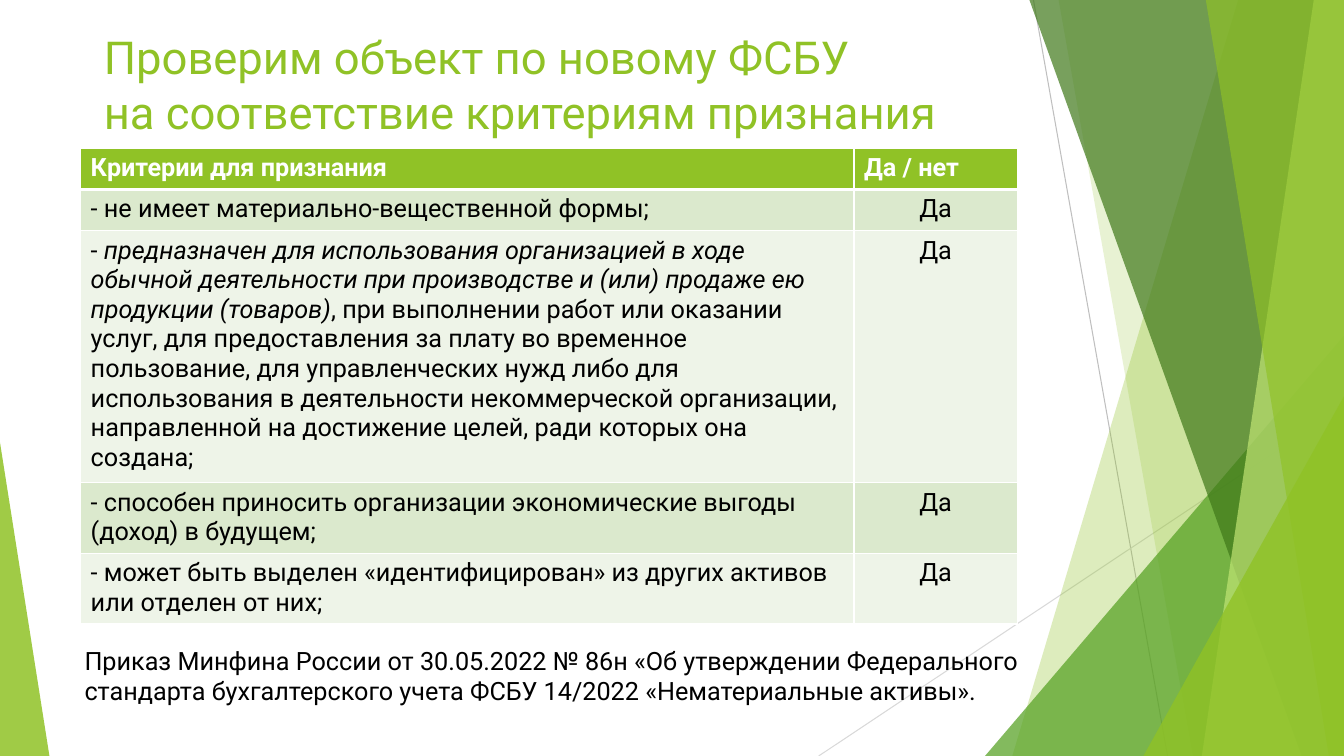
from lxml import etree
from pptx import Presentation
from pptx.dml.color import RGBColor
from pptx.enum.shapes import MSO_CONNECTOR, MSO_SHAPE
from pptx.enum.text import MSO_ANCHOR, PP_ALIGN
from pptx.oxml import parse_xml
from pptx.oxml.ns import nsdecls, qn
from pptx.util import Pt

PX = 9144
FONT = "Roboto"
LIME = RGBColor(0x90, 0xC2, 0x26)
GREEN = RGBColor(0x54, 0xA0, 0x21)
FOREST = RGBColor(0x3F, 0x78, 0x19)
PALE_LIME = RGBColor(0xC0, 0xE4, 0x74)
ROW_TINTS = (RGBColor(0xDB, 0xE9, 0xCD), RGBColor(0xEE, 0xF4, 0xE8))
GREY = RGBColor(0xBF, 0xBF, 0xBF)
LIGHT_GREY = RGBColor(0xD9, 0xD9, 0xD9)
WHITE = RGBColor(0xFF, 0xFF, 0xFF)
BLACK = RGBColor(0, 0, 0)

TITLE = "Проверим объект по новому ФСБУ\vна соответствие критериям признания"
SOURCE = ("Приказ Минфина России от 30.05.2022 № 86н «Об утверждении Федерального "
          "стандарта бухгалтерского учета ФСБУ 14/2022 «Нематериальные активы».")
HEADINGS = ("Критерии для признания", "Да / нет")
CRITERIA = (
    (("- не имеет материально-вещественной формы;", False),),
    (("- ", False),
     ("предназначен для использования организацией в ходе обычной деятельности "
      "при производстве и (или) продаже ею продукции (товаров)", True),
     (", при выполнении работ или оказании услуг, для предоставления за плату во "
      "временное пользование, для управленческих нужд либо для использования в "
      "деятельности некоммерческой организации, направленной на достижение целей, "
      "ради которых она создана;", False)),
    (("- способен приносить организации экономические выгоды (доход) в будущем;", False),),
    (("- может быть выделен «идентифицирован» из других активов или отделен от них;", False),),
)
ANSWER = "Да"
COLUMN_WIDTHS = (767, 162)
ROW_HEIGHTS = (41, 41, 250, 70, 69)

RAYS = ((1025, 0, 1158, 750, GREY), (1333, 403, 812, 750, LIGHT_GREY))
BACK_FACETS = ((1228, 1004, LIME, 30), (1050, 1183, LIME, 20))
FRONT_FACETS = ((1021, 1291, FOREST, 70), (1303, 1192, PALE_LIME, 70), (1196, 1318, LIME, 65))
BACK_WEDGE = (977, 333, 356, 417, 1, GREEN, 72)
FRONT_WEDGES = ((1134, 393, 199, 357, 1, LIME, 80), (0, 439, 49, 311, 0, LIME, 85))


def emu(*lengths):
    """Turn px lengths into EMU."""
    return [length * PX for length in lengths]


def write(frame, text, size=18, color=BLACK, bold=False, italic=False, align=PP_ALIGN.LEFT):
    """Add formatted text to the first paragraph of a frame."""
    paragraph = frame.paragraphs[0]
    paragraph.alignment = align
    for index, part in enumerate(text.split("\v")):
        if index:
            paragraph.add_line_break()
        run = paragraph.add_run()
        run.text = part
        font = run.font
        font.name, font.size, font.bold, font.italic = FONT, Pt(size), bold, italic
        font.color.rgb = color


def tint(shape, color, opacity):
    """Fill a shape with a translucent colour and no outline."""
    shape.shadow.inherit = False
    shape.line.fill.background()
    shape.fill.solid()
    shape.fill.fore_color.rgb = color
    swatch = shape.element.spPr.find(qn("a:solidFill"))[0]
    etree.SubElement(swatch, qn("a:alpha")).set("val", str(opacity * 1000))


def add_ray(shapes, x1, y1, x2, y2, color):
    """Draw a thin line across the background."""
    ray = shapes.add_connector(MSO_CONNECTOR.STRAIGHT, *emu(x1, y1, x2, y2))
    ray.line.color.rgb = color
    ray.line.width = Pt(0.75)
    etree.SubElement(ray.element.spPr, qn("a:effectLst"))


def add_facet(shapes, top_x, bottom_x, color, opacity):
    """Draw a slanted full-height panel that reaches the right edge."""
    outline = shapes.build_freeform(top_x, 0, PX)
    outline.add_line_segments(((1333, 0), (1333, 750), (bottom_x, 750)), close=True)
    tint(outline.convert_to_shape(), color, opacity)


def add_wedge(shapes, left, top, width, height, apex, color, opacity):
    """Draw a corner triangle with its apex at the given fraction."""
    wedge = shapes.add_shape(MSO_SHAPE.ISOSCELES_TRIANGLE, *emu(left, top, width, height))
    wedge.adjustments[0] = apex
    tint(wedge, color, opacity)


def style_cell(cell, color, bottom=1):
    """Give a cell white borders and a solid fill."""
    properties = cell._tc.get_or_add_tcPr()
    for side, width in (("L", 1), ("R", 1), ("T", 1), ("B", bottom)):
        properties.append(parse_xml(
            f'<a:ln{side} {nsdecls("a")} w="{Pt(width)}"><a:solidFill>'
            f'<a:srgbClr val="{WHITE}"/></a:solidFill></a:ln{side}>'))
    cell.fill.solid()
    cell.fill.fore_color.rgb = color


def add_criteria_table(shapes):
    """Add the table of recognition criteria."""
    place = emu(80, 147, sum(COLUMN_WIDTHS), sum(ROW_HEIGHTS))
    table = shapes.add_table(len(ROW_HEIGHTS), len(COLUMN_WIDTHS), *place).table
    for column, width in zip(table.columns, COLUMN_WIDTHS):
        column.width = width * PX
    for row, height in zip(table.rows, ROW_HEIGHTS):
        row.height = height * PX
    for index, heading in enumerate(HEADINGS):
        cell = table.cell(0, index)
        style_cell(cell, LIME, bottom=3)
        write(cell.text_frame, heading, color=WHITE, bold=True)
    for index, criterion in enumerate(CRITERIA):
        wording, answer = table.cell(index + 1, 0), table.cell(index + 1, 1)
        for cell in (wording, answer):
            style_cell(cell, ROW_TINTS[index % 2])
        for text, italic in criterion:
            write(wording.text_frame, text, italic=italic)
        write(answer.text_frame, ANSWER, align=PP_ALIGN.CENTER)


def add_backdrop(shapes):
    """Draw the translucent green backdrop."""
    for ray in RAYS:
        add_ray(shapes, *ray)
    for facet in BACK_FACETS:
        add_facet(shapes, *facet)
    add_wedge(shapes, *BACK_WEDGE)
    for facet in FRONT_FACETS:
        add_facet(shapes, *facet)
    for wedge in FRONT_WEDGES:
        add_wedge(shapes, *wedge)


def add_title(shapes):
    """Place the title in front of the backdrop."""
    title = shapes.title
    title.element.getparent().append(title.element)
    title.left, title.top, title.width, title.height = emu(93, 24, 1133, 88)
    title.text_frame.word_wrap = True
    title.text_frame.vertical_anchor = MSO_ANCHOR.TOP
    write(title.text_frame, TITLE, size=32.4, color=LIME)


def add_source(shapes):
    """Add the reference to the order under the table."""
    source = shapes.add_textbox(*emu(74, 635, 962, 71))
    source.text_frame.word_wrap = True
    write(source.text_frame, SOURCE)


def main():
    """Build and save the slide."""
    deck = Presentation()
    deck.slide_width, deck.slide_height = emu(1333, 750)
    shapes = deck.slides.add_slide(deck.slide_layouts[5]).shapes
    add_backdrop(shapes)
    add_title(shapes)
    add_source(shapes)
    add_criteria_table(shapes)
    deck.save("out.pptx")


if __name__ == "__main__":
    main()
